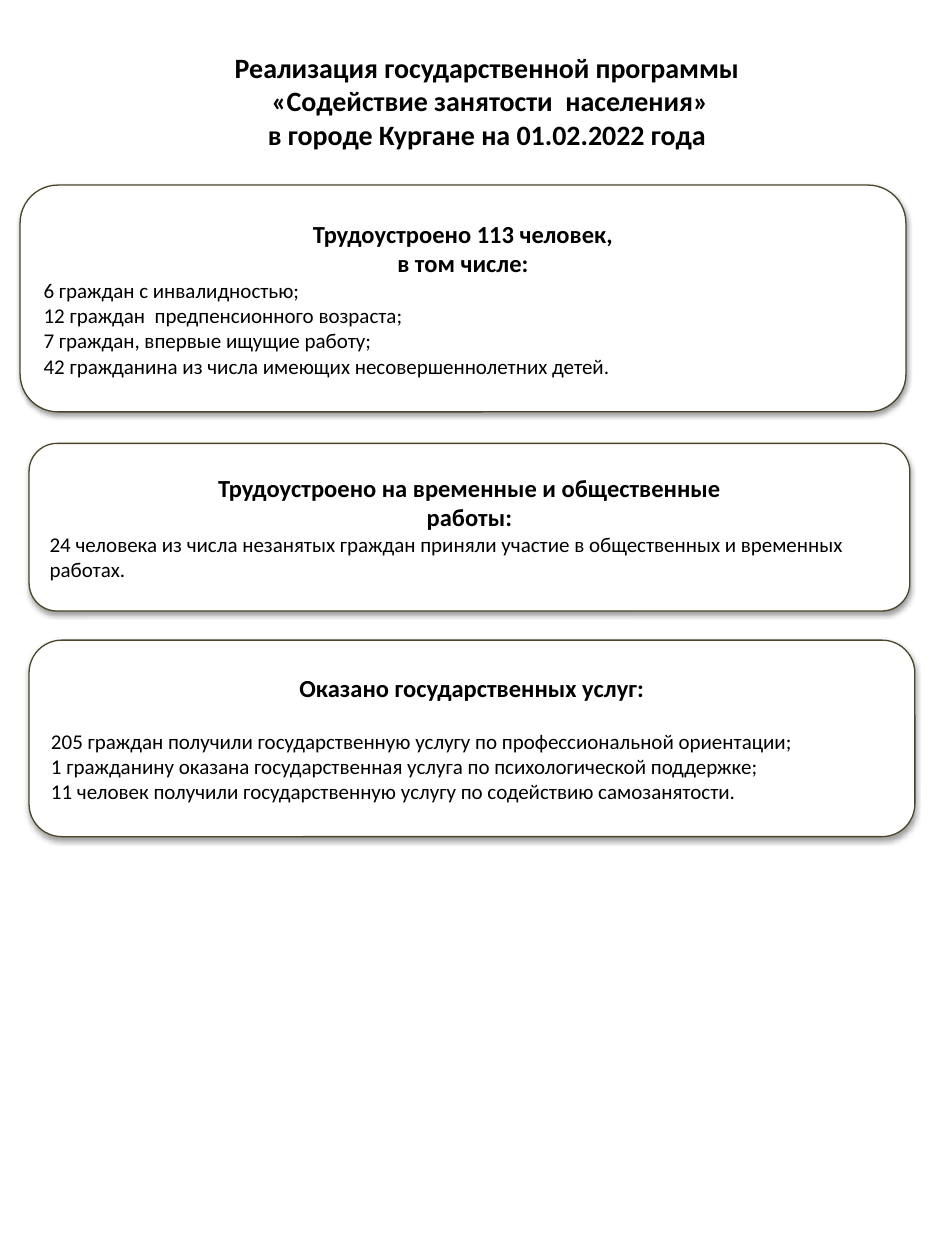
from lxml.etree import SubElement
from pptx import Presentation
from pptx.dml.color import RGBColor
from pptx.enum.shapes import MSO_SHAPE as Shape
from pptx.enum.text import MSO_ANCHOR as Anchor, MSO_AUTO_SIZE as AutoSize, PP_ALIGN as Align
from pptx.oxml.ns import qn
from pptx.util import Pt

BLACK = RGBColor(0x00, 0x00, 0x00)
WHITE = RGBColor(0xFF, 0xFF, 0xFF)
OLIVE = RGBColor(0x4A, 0x45, 0x2A)

TITLE = [
    "Реализация государственной программы",
    " «Содействие занятости  населения»",
    "в городе Кургане на 01.02.2022 года",
]
CARDS = [
    ((11.5, 105.8, 506.2, 129.6), 0,
     ["Трудоустроено 113 человек,", "в том числе:"],
     ["6 граждан с инвалидностью;",
      "12 граждан  предпенсионного возраста;",
      "7 граждан, впервые ищущие работу;",
      "42 гражданина из числа имеющих несовершеннолетних детей."]),
    ((16.6, 253.4, 503.3, 95.8), 0,
     ["Трудоустроено на временные и общественные", "работы:"],
     ["24 человека из числа незанятых граждан приняли участие в общественных и временных работах."]),
    ((16.6, 365.8, 506.2, 112.3), 14.6,
     ["Оказано государственных услуг:"],
     ["205 граждан получили государственную услугу по профессиональной ориентации;",
      "1 гражданину оказана государственная услуга по психологической поддержке;",
      "11 человек получили государственную услугу по содействию самозанятости."]),
]


class Report:
    """Draws the report's elements on one page in a shared style."""

    font = "Calibri"
    title_size, heading_size, body_size = 16, 14, 12

    def __init__(self, page):
        self.page = page

    def add_lines(self, frame, lines):
        for index, (text, size, bold, align, gap) in enumerate(lines):
            para = frame.paragraphs[0] if index == 0 else frame.add_paragraph()
            para.text = text
            para.alignment = align
            para.space_before = Pt(gap)
            para.font.name = self.font
            para.font.size = Pt(size)
            para.font.bold = bold
            para.font.color.rgb = BLACK

    def title(self, bounds, lines):
        frame = self.page.shapes.add_textbox(*map(Pt, bounds)).text_frame
        frame.word_wrap = True
        frame.auto_size = AutoSize.SHAPE_TO_FIT_TEXT
        self.add_lines(frame, [(text, self.title_size, True, Align.CENTER, 0) for text in lines])

    def shadow(self, shape):
        shape.shadow.inherit = False
        effects = shape._element.spPr.find(qn("a:effectLst"))
        outer = SubElement(effects, qn("a:outerShdw"), blurRad=str(Pt(3.1)),
                           dist=str(Pt(1.6)), dir="5400000", rotWithShape="0")
        color = SubElement(outer, qn("a:srgbClr"), val=str(BLACK))
        SubElement(color, qn("a:alpha"), val="38000")

    def card(self, bounds, gap, headings, items):
        box = self.page.shapes.add_shape(Shape.ROUNDED_RECTANGLE, *map(Pt, bounds))
        box.fill.solid()
        box.fill.fore_color.rgb = WHITE
        box.line.color.rgb = OLIVE
        box.line.width = Pt(0.75)
        self.shadow(box)
        frame = box.text_frame
        frame.word_wrap = True
        frame.vertical_anchor = Anchor.MIDDLE
        lines = [(text, self.heading_size, True, Align.CENTER, 0) for text in headings]
        lines += [(text, self.body_size, False, Align.LEFT, 0 if index else gap)
                  for index, text in enumerate(items)]
        self.add_lines(frame, lines)


def main():
    deck = Presentation()
    deck.slide_width, deck.slide_height = Pt(540), Pt(720)
    report = Report(deck.slides.add_slide(deck.slide_layouts[6]))
    report.title((37.4, 25.2, 481.7, 65.5), TITLE)
    for card in CARDS:
        report.card(*card)
    deck.save("out.pptx")


if __name__ == "__main__":
    main()
